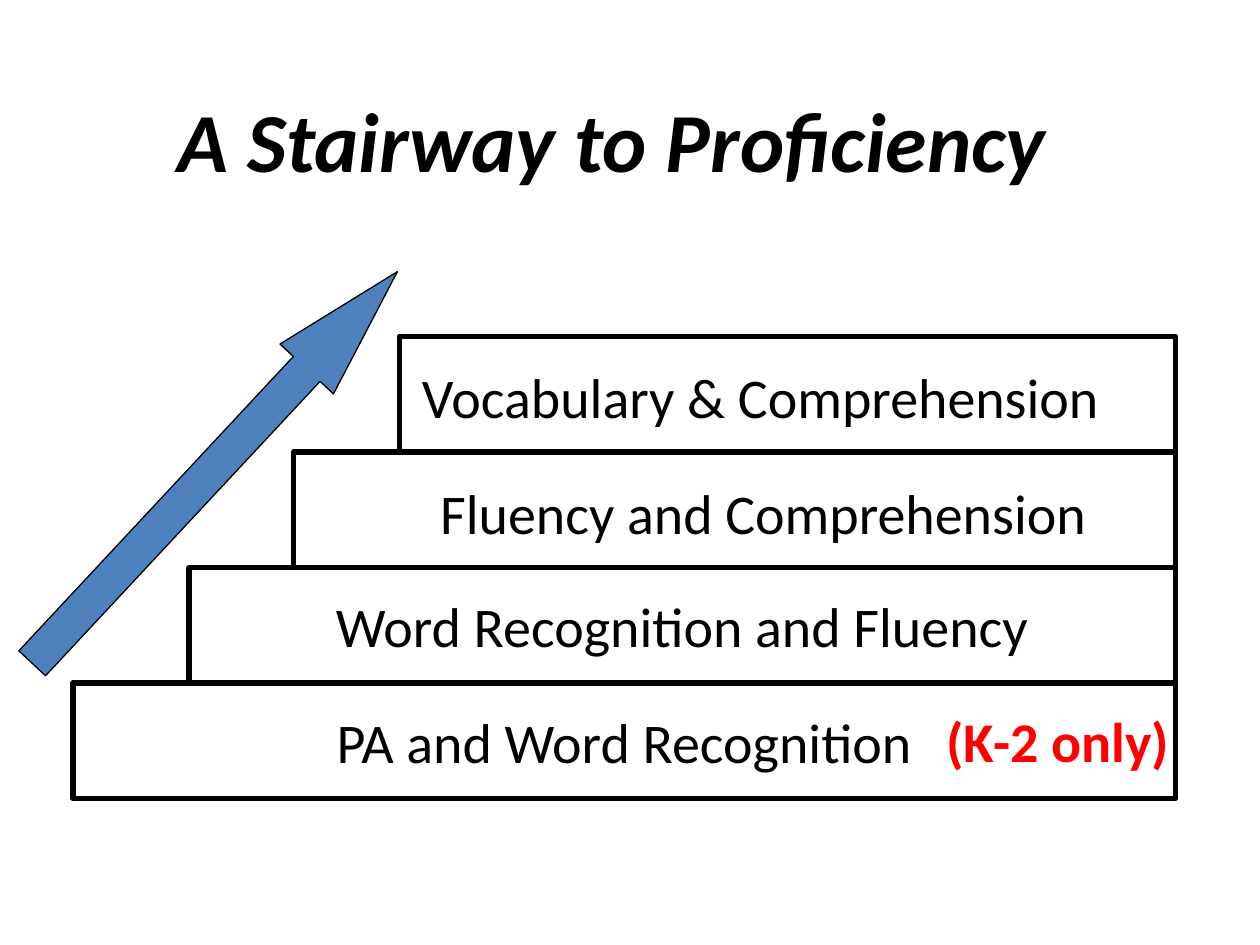
"""Build the stairway slide: four steps, a rising arrow and a title."""
import pptx
import pptx.util
import pptx.dml.color
import pptx.enum.shapes
import pptx.enum.text

WIDE, HIGH = 10, 7.5
FONT = "Calibri"
INK, RED, BLUE = "000000", "FF0000", "4F81BD"
RIGHT, TOP, RISE = 9.33, 2.67, 0.917
STEPS = [
    (3.17, ""),
    (2.33, ""),
    (1.5, "Word Recognition and Fluency"),
    (0.58, "PA and Word Recognition"),
]
LABELS = [
    ("Fluency and Comprehension", (3.12, 3.75, 5.88, 0.63), "CENTER", {}),
    ("Vocabulary & Comprehension", (3.25, 2.83, 6.11, 0.63), "LEFT", {}),
    ("A Stairway to Proficiency", (1.31, 0.65, 8.2, 0.9), "LEFT",
     {"size": 48, "bold": True, "italic": True}),
    ("(K-2 only)", (7.41, 5.56, 1.99, 0.64), "LEFT", {"tint": RED, "bold": True}),
]
ARROW = (-0.42, 3.42, 4.25, 0.58)
TURN, HEAD = 313, (0.5, 1.82)


def inches(box):
    """Turn lengths in inches into slide units."""
    return [pptx.util.Inches(side) for side in box]


def color(code):
    """Turn a hex string into a colour."""
    return pptx.dml.color.RGBColor.from_string(code)


def write(shape, text, align, size=32, tint=INK, bold=False, italic=False):
    """Put one styled line of text in a shape."""
    frame = shape.text_frame
    frame.word_wrap = False
    line = frame.paragraphs[0]
    line.alignment = getattr(pptx.enum.text.PP_ALIGN, align)
    run = line.add_run()
    run.text = text
    font = run.font
    font.name, font.size = FONT, pptx.util.Pt(size)
    font.bold, font.italic = bold, italic
    font.color.rgb = color(tint)


def draw(slide, kind, box, width, fill=None):
    """Add an outlined shape, hollow unless a fill is given."""
    shape = slide.shapes.add_shape(kind, *inches(box))
    shape.shadow.inherit = False
    shape.line.color.rgb = color(INK)
    shape.line.width = pptx.util.Pt(width)
    if fill:
        shape.fill.solid()
        shape.fill.fore_color.rgb = color(fill)
    else:
        shape.fill.background()
    return shape


def main():
    """Build and save the slide."""
    deck = pptx.Presentation()
    deck.slide_width, deck.slide_height = inches((WIDE, HIGH))
    slide = deck.slides.add_slide(deck.slide_layouts[6])
    kinds = pptx.enum.shapes.MSO_SHAPE

    for row, (left, text) in reversed(list(enumerate(STEPS))):
        box = (left, TOP + row * RISE, RIGHT - left, RISE)
        step = draw(slide, kinds.RECTANGLE, box, 3)
        if text:
            step.text_frame.vertical_anchor = pptx.enum.text.MSO_ANCHOR.MIDDLE
            write(step, text, "CENTER")

    arrow = draw(slide, kinds.RIGHT_ARROW, ARROW, 0.75, BLUE)
    arrow.rotation = TURN
    for spot, value in enumerate(HEAD):
        arrow.adjustments[spot] = value

    for text, box, align, style in LABELS:
        label = slide.shapes.add_textbox(*inches(box))
        label.text_frame.auto_size = pptx.enum.text.MSO_AUTO_SIZE.SHAPE_TO_FIT_TEXT
        write(label, text, align, **style)

    deck.save("out.pptx")


if __name__ == "__main__":
    main()
